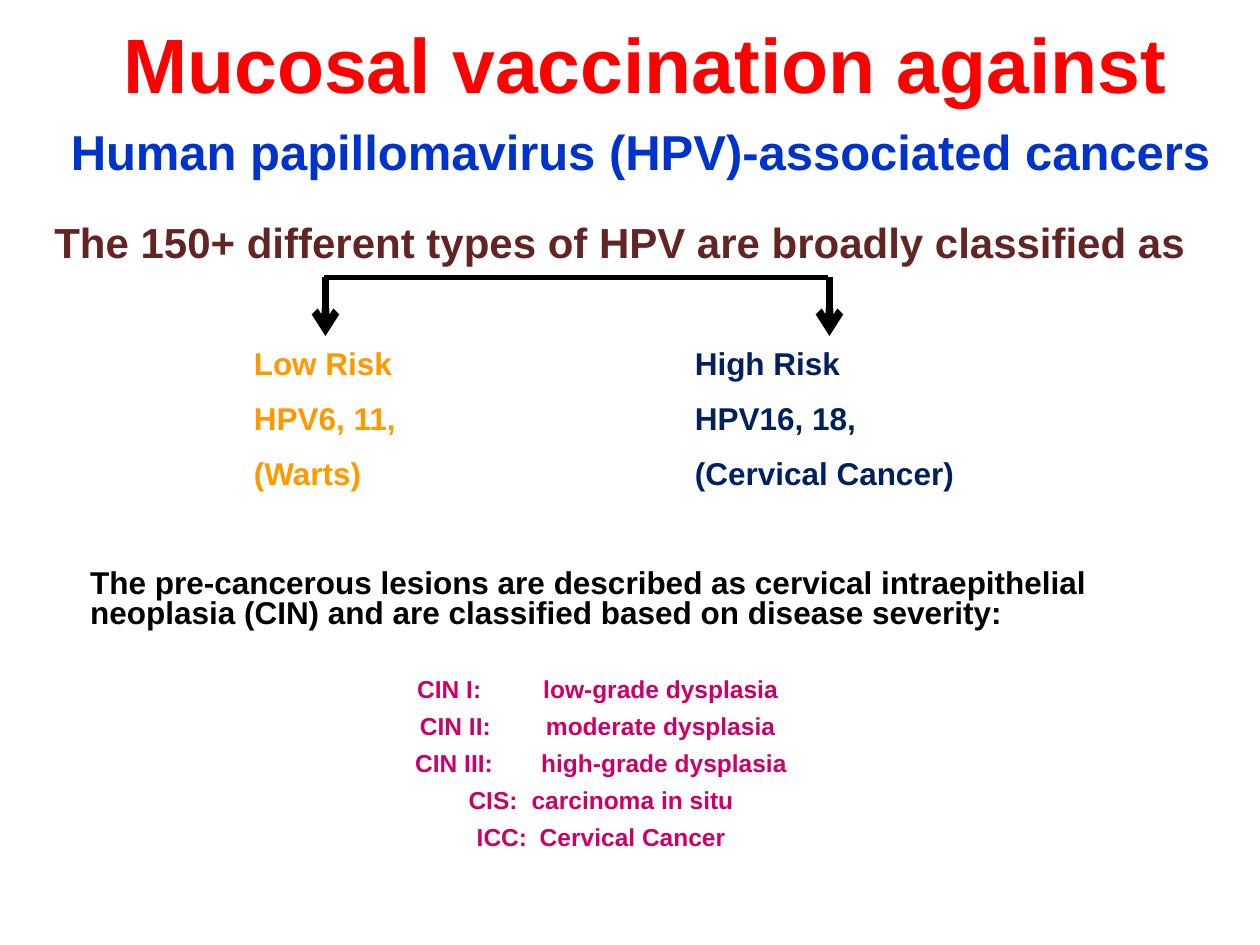
from pptx import Presentation
from pptx.dml.color import RGBColor
from pptx.enum.shapes import MSO_CONNECTOR
from pptx.enum.text import MSO_ANCHOR, PP_ALIGN
from pptx.oxml.ns import qn
from pptx.util import Pt
from lxml.etree import SubElement

RED = RGBColor(0xFF, 0x00, 0x00)
BLUE = RGBColor(0x00, 0x33, 0xCC)
BROWN = RGBColor(0x63, 0x25, 0x23)
ORANGE = RGBColor(0xFF, 0x99, 0x00)
NAVY = RGBColor(0x00, 0x20, 0x60)
MAGENTA = RGBColor(0xCC, 0x00, 0x66)
BLACK = RGBColor(0x00, 0x00, 0x00)


class SlideBuilder:
    font_name = "Arial"

    def __init__(self, page):
        self.page = page

    def style(self, para, size, color, align=PP_ALIGN.LEFT):
        para.alignment = align
        para.font.name = self.font_name
        para.font.size = Pt(size)
        para.font.bold = True
        para.font.color.rgb = color

    def title(self, text, left, top, width, height, size, color):
        box = self.page.shapes.title
        box.left, box.top, box.width, box.height = map(Pt, (left, top, width, height))
        frame = box.text_frame
        frame.text = text
        frame.vertical_anchor = MSO_ANCHOR.MIDDLE
        self.style(frame.paragraphs[0], size, color, PP_ALIGN.CENTER)

    def text(self, lines, left, top, width, height, size, color,
             align=PP_ALIGN.LEFT, gap=0, anchor=MSO_ANCHOR.TOP):
        """Add one paragraph per line, with gap points between them."""
        box = self.page.shapes.add_textbox(*map(Pt, (left, top, width, height)))
        frame = box.text_frame
        frame.word_wrap = True
        frame.vertical_anchor = anchor
        frame.text = "\n".join(lines)
        for index, para in enumerate(frame.paragraphs):
            self.style(para, size, color, align)
            para.space_before = Pt(gap if index else 0)
        return frame

    def line(self, x1, y1, x2, y2, weight, arrow=False):
        line = self.page.shapes.add_connector(
            MSO_CONNECTOR.STRAIGHT, *map(Pt, (x1, y1, x2, y2)))
        line.line.color.rgb = BLACK
        line.line.width = Pt(weight)
        if arrow:
            SubElement(line.line._get_or_add_ln(), qn("a:tailEnd"), type="arrow")
        SubElement(line._element.spPr, qn("a:effectLst"))


def main():
    deck = Presentation()
    deck.slide_width, deck.slide_height = Pt(720), Pt(540)
    page = deck.slides.add_slide(deck.slide_layouts[5])
    builder = SlideBuilder(page)

    builder.title("Mucosal vaccination against", 63, 6, 612, 60, 44, RED)
    builder.text(["Human papillomavirus (HPV)-associated cancers"],
                 24, 66, 684, 41, 28, BLUE, PP_ALIGN.CENTER)
    builder.text(["The 150+ different types of HPV are broadly classified as"],
                 24, 120, 678, 36, 24, BROWN)

    branch_top, branch_bottom = 158.4, 192
    low_x, high_x = 186, 474
    builder.line(low_x - 1, branch_top, high_x - 1, branch_top, 3)
    for x in (low_x, high_x):
        builder.line(x, branch_top, x, branch_bottom, 4.5, arrow=True)

    risk_groups = [
        (["Low Risk", "HPV6, 11,", "(Warts)"], 138, 108, ORANGE),
        (["High Risk", "HPV16, 18,", "(Cervical Cancer)"], 390, 166, NAVY),
    ]
    for lines, left, width, color in risk_groups:
        builder.text(lines, left, branch_bottom, width, 94, 18, color,
                     gap=9.9, anchor=MSO_ANCHOR.MIDDLE)

    lesions = builder.text(
        ["The pre-cancerous lesions are described as cervical intraepithelial "
         "neoplasia (CIN) and are classified based on disease severity:",
         "CIN I:\tlow-grade dysplasia ",
         "CIN II:\tmoderate dysplasia ",
         "CIN III:\thigh-grade dysplasia",
         "CIS:\tcarcinoma in situ",
         "ICC:\tCervical Cancer"],
        44.5, 322.5, 598, 174, 14, MAGENTA, PP_ALIGN.CENTER, gap=7.6)
    intro, first_grade = lesions.paragraphs[:2]
    builder.style(intro, 18, BLACK)
    first_grade.space_before = Pt(28)
    for para in lesions.paragraphs:
        para.line_spacing = 0.8

    deck.save("out.pptx")


if __name__ == "__main__":
    main()
